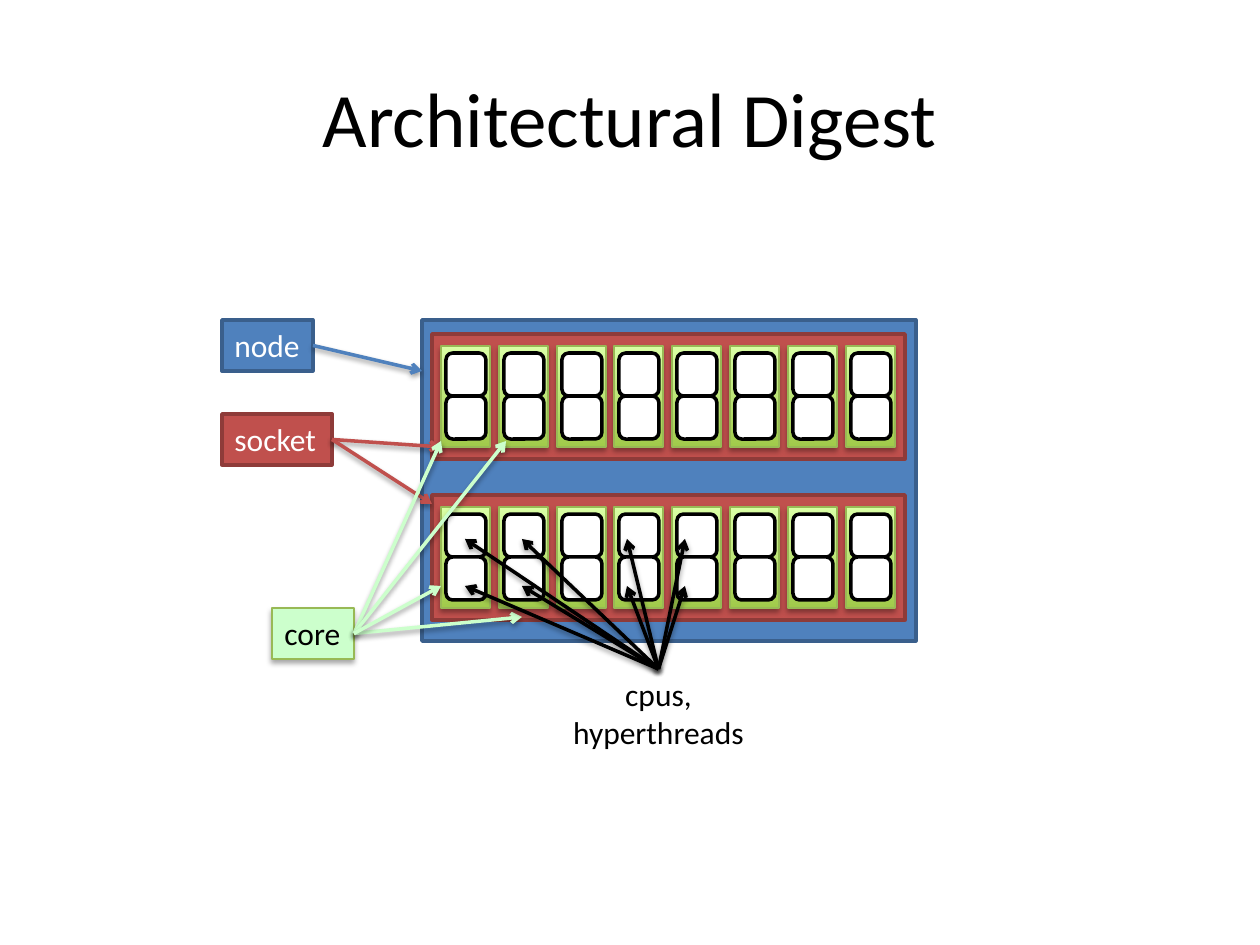
from dataclasses import dataclass

from lxml.etree import SubElement
from pptx import Presentation
from pptx.dml.color import RGBColor
from pptx.enum.shapes import MSO_CONNECTOR, MSO_SHAPE
from pptx.enum.text import MSO_ANCHOR, MSO_AUTO_SIZE, PP_ALIGN
from pptx.oxml.ns import qn
from pptx.util import Emu, Pt

SCALE = 914400 / 126  # EMU in one px
TOP, RIGHT = 0, 3  # connection sites


@dataclass(frozen=True)
class Theme:
    font: str = "Calibri"
    title_size: int = 44
    label_size: int = 18
    thick: float = 2
    thin: float = 0.75
    black: str = "000000"
    white: str = "FFFFFF"
    node: str = "4F81BD"
    node_edge: str = "3A5F8C"
    socket: str = "C0504D"
    socket_edge: str = "8E3B39"
    core: str = "CCFFCC"
    core_edge: str = "98B955"
    core_gradient: tuple = ("A0CA4A", "DAFFA5")


T = Theme()
# Opacity in percent, distance in points
BOX_SHADOW = (35, 1.8)
ARROW_SHADOW = (38, 1.6)


def px(n):
    return Emu(round(n * SCALE))


def rgb(value):
    return RGBColor.from_string(value)


def set_attrs(obj, values):
    for name, value in values.items():
        setattr(obj, name, value)


def set_line(shape, color, width):
    shape.line.width = Pt(width)
    shape.line.color.rgb = rgb(color)


def set_shadow(shape, shadow=None):
    """Give the shape its own effect list, empty unless a shadow is named."""
    effects = SubElement(shape._element.spPr, qn("a:effectLst"))
    if shadow:
        opacity, dist = shadow
        outer = SubElement(effects, qn("a:outerShdw"), blurRad=str(Pt(3.1)),
                           dist=str(Pt(dist)), dir="5400000", rotWithShape="0")
        color = SubElement(outer, qn("a:srgbClr"), val=T.black)
        SubElement(color, qn("a:alpha"), val=str(opacity * 1000))


def write(shape, lines, size, color, align, **frame):
    tf = shape.text_frame
    set_attrs(tf, frame)
    for i, line in enumerate(lines):
        p = tf.paragraphs[0] if i == 0 else tf.add_paragraph()
        p.alignment = align
        r = p.add_run()
        r.text = line
        set_attrs(r.font, {"name": T.font, "size": Pt(size)})
        r.font.color.rgb = rgb(color)


def add_box(shapes, at, fill, edge, width=T.thick, kind=MSO_SHAPE.RECTANGLE, shadow=None):
    sp = shapes.add_shape(kind, *map(px, at))
    if isinstance(fill, tuple):
        sp.fill.gradient()
        sp.fill.gradient_angle = 90
        for stop, color in zip(sp.fill.gradient_stops, fill):
            stop.color.rgb = rgb(color)
    else:
        sp.fill.solid()
        sp.fill.fore_color.rgb = rgb(fill)
    set_line(sp, edge, width)
    set_shadow(sp, shadow)
    return sp


def add_label(shapes, text, at, fill, edge, color=T.white, wrap=False, **style):
    sp = add_box(shapes, at, fill, edge, **style)
    write(sp, [text], T.label_size, color, PP_ALIGN.LEFT, word_wrap=wrap,
          auto_size=MSO_AUTO_SIZE.SHAPE_TO_FIT_TEXT, vertical_anchor=MSO_ANCHOR.TOP)
    return sp


def add_socket(shapes, x, y):
    """One socket: eight cores in a row, each with two stacked threads."""
    group = shapes.add_group_shape().shapes
    add_box(group, (x, y, 473, 125), T.socket, T.socket_edge)
    for i in range(8):
        core_x = x + 9 + round(i * 57.8)
        add_box(group, (core_x, y + 12, 49, 101), T.core_gradient, T.core_edge,
                T.thin, shadow=BOX_SHADOW)
        for thread_y in (y + 19, y + 62):
            add_box(group, (core_x + 5, thread_y, 40, 43), T.white, T.black,
                    kind=MSO_SHAPE.ROUNDED_RECTANGLE)


def add_arrows(shapes, source, site, targets, color):
    """Arrows that fan out from one side of the source."""
    for x, y in targets:
        line = shapes.add_connector(MSO_CONNECTOR.STRAIGHT, 0, 0, px(x), px(y))
        line.begin_connect(source, site)
        set_line(line, color, T.thick)
        SubElement(line.line._get_or_add_ln(), qn("a:tailEnd"), type="arrow")
        set_shadow(line, ARROW_SHADOW)


def main():
    prs = Presentation()
    set_attrs(prs, {"slide_width": px(1260), "slide_height": px(945)})
    s = prs.slides.add_slide(prs.slide_layouts[5])
    shapes = s.shapes

    # Title
    title = shapes.title
    set_attrs(title, {"left": px(63), "top": px(38), "width": px(1134), "height": px(157)})
    write(title, ["Architectural Digest"], T.title_size, T.black, PP_ALIGN.CENTER,
          vertical_anchor=MSO_ANCHOR.MIDDLE)

    # Labels
    node = add_label(shapes, "node", (222, 320, 91, 51), T.node, T.node_edge, wrap=True)
    socket = add_label(shapes, "socket", (222, 414, 110, 51), T.socket, T.socket_edge)
    core = add_label(shapes, "core", (272, 608, 82, 51), T.core, T.core_edge,
                     color=T.black, width=T.thin, shadow=BOX_SHADOW)
    threads = shapes.add_textbox(*map(px, (559, 669, 199, 89)))
    write(threads, ["cpus,", "hyperthreads"], T.label_size, T.black, PP_ALIGN.CENTER,
          word_wrap=False, auto_size=MSO_AUTO_SIZE.SHAPE_TO_FIT_TEXT)

    # Node with two sockets
    add_box(shapes, (422, 320, 494, 321), T.node, T.node_edge)
    for y in (334, 495):
        add_socket(shapes, 432, y)

    # Arrows from each label to its parts
    add_arrows(shapes, node, RIGHT, [(422, 371)], T.node)
    add_arrows(shapes, socket, RIGHT, [(441, 447), (432, 504)], T.socket)
    add_arrows(shapes, core, RIGHT, [(441, 441), (506, 441), (522, 617), (441, 586)], T.core)
    add_arrows(shapes, threads, TOP,
               [(x, y) for x in (627, 685, 465, 522) for y in (539, 586)], T.black)

    prs.save("out.pptx")


if __name__ == "__main__":
    main()
